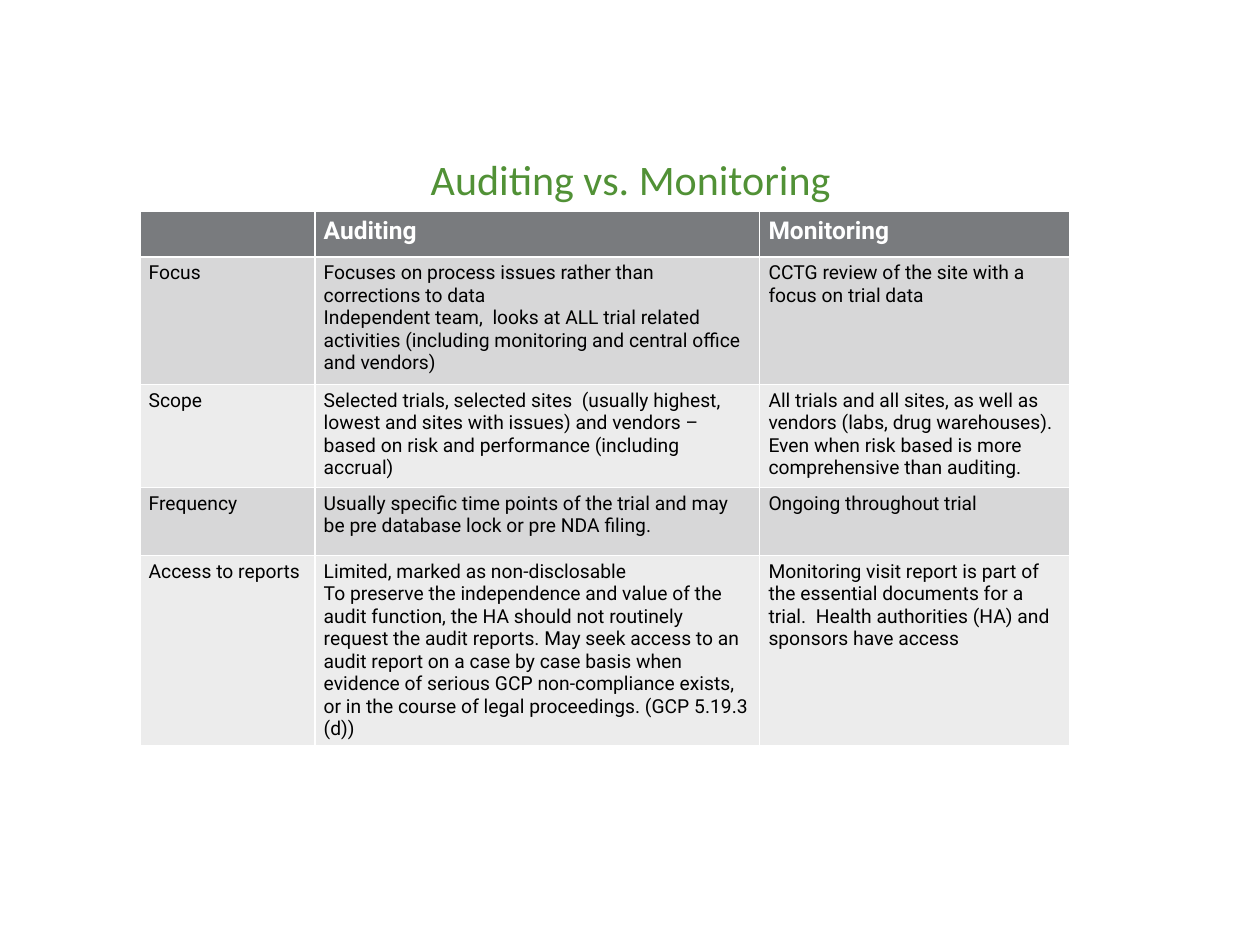
from pptx import Presentation
from pptx.dml.color import RGBColor as RGB
from pptx.enum.text import MSO_ANCHOR as Anchor, PP_ALIGN as Align
from pptx.util import Inches, Pt

TITLE = "Auditing vs. Monitoring"
ROWS = [
    ("", "Auditing", "Monitoring"),
    ("Focus",
     "Focuses on process issues rather than corrections to data\n"
     "Independent team,  looks at ALL trial related activities "
     "(including monitoring and central office and vendors)",
     "CCTG review of the site with a focus on trial data"),
    ("Scope",
     "Selected trials, selected sites  (usually highest, lowest and sites "
     "with issues) and vendors – based on risk and performance "
     "(including accrual)",
     "All trials and all sites, as well as vendors (labs, drug warehouses). "
     "Even when risk based is more comprehensive than auditing."),
    ("Frequency",
     "Usually specific time points of the trial and may be pre database "
     "lock or pre NDA filing.",
     "Ongoing throughout trial"),
    ("Access to reports",
     "Limited, marked as non-disclosable\n"
     "To preserve the independence and value of the audit function, the HA "
     "should not routinely request the audit reports. May seek access to an "
     "audit report on a case by case basis when evidence of serious GCP "
     "non-compliance exists, or in the course of legal proceedings. "
     "(GCP 5.19.3 (d))",
     "Monitoring visit report is part of the essential documents for a "
     "trial.  Health authorities (HA) and sponsors have access"),
]
WIDTHS = [1.39, 3.53, 2.46]
HEIGHTS = [0.32, 1.01, 0.82, 0.54, 1.39]
BANDS = ["ECECEC", "D7D7D8"]
HEAD = {"name": "Roboto", "size": Pt(14), "bold": True, "color": "FFFFFF"}
BODY = {"name": "Roboto", "size": Pt(11), "bold": False, "color": "000000"}
LEAD = {"name": "Calibri", "size": Pt(24), "bold": False, "color": "519136"}
PAD = {"margin_left": Inches(0.07), "margin_right": Inches(0.07),
       "margin_top": Inches(0.04), "margin_bottom": Inches(0.04)}


def paint(part, color):
    """Give a font colour or a solid fill its hex colour."""
    part.rgb = RGB.from_string(color)


def write(frame, text, style):
    """Write each line of text as a styled paragraph."""
    for i, line in enumerate(text.split("\n")):
        para = frame.add_paragraph() if i else frame.paragraphs[0]
        run = para.add_run()
        run.text = line
        for key, value in style.items():
            if key == "color":
                paint(run.font.color, value)
            else:
                setattr(run.font, key, value)


def add_title(slide):
    """Place the centred title."""
    title = slide.shapes.title
    title.left, title.top = Inches(1.52), Inches(1.17)
    title.width, title.height = Inches(6.97), Inches(0.45)
    frame = title.text_frame
    frame.vertical_anchor = Anchor.TOP
    write(frame, TITLE, LEAD)
    frame.paragraphs[0].alignment = Align.CENTER


def add_grid(slide):
    """Build the comparison table."""
    table = slide.shapes.add_table(
        len(ROWS), len(WIDTHS), Inches(1.11), Inches(1.68),
        Inches(sum(WIDTHS)), Inches(sum(HEIGHTS))).table
    for col, width in zip(table.columns, WIDTHS):
        col.width = Inches(width)
    for r, (row, height) in enumerate(zip(ROWS, HEIGHTS)):
        table.rows[r].height = Inches(height)
        for c, text in enumerate(row):
            cell = table.cell(r, c)
            for key, value in PAD.items():
                setattr(cell, key, value)
            cell.fill.solid()
            paint(cell.fill.fore_color, BANDS[r % 2] if r else "797B7E")
            write(cell.text_frame, text, BODY if r else HEAD)


def main():
    """Build and save the slide."""
    deck = Presentation()
    deck.slide_width, deck.slide_height = Inches(10), Inches(7.5)
    slide = deck.slides.add_slide(deck.slide_layouts[5])
    add_grid(slide)
    add_title(slide)
    deck.save("out.pptx")


if __name__ == "__main__":
    main()
